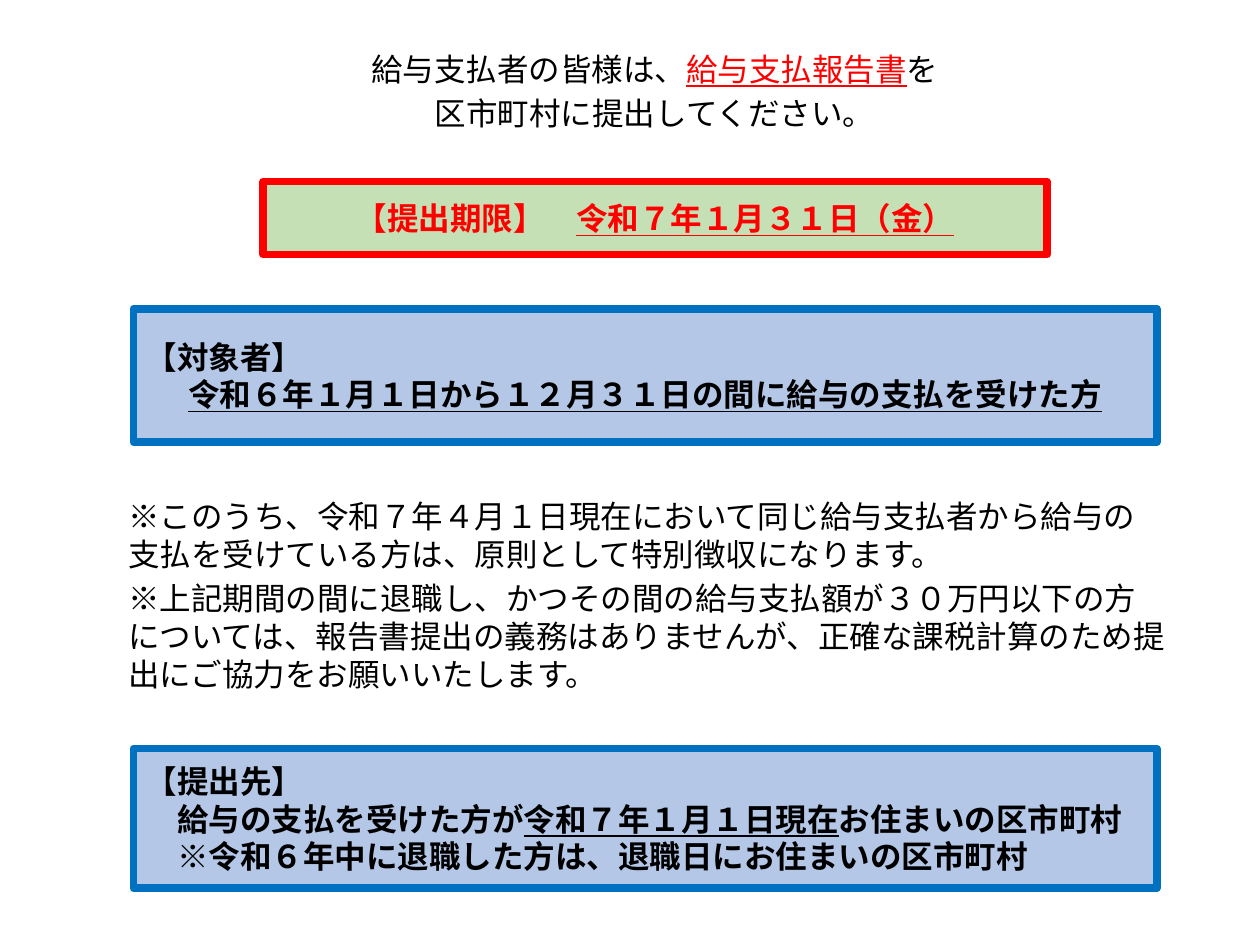
import pptx
import pptx.util
import pptx.dml.color
import pptx.enum.shapes
import pptx.enum.text
import pptx.oxml.ns
import lxml.etree

Inches, Pt = pptx.util.Inches, pptx.util.Pt
RGBColor = pptx.dml.color.RGBColor
PP_ALIGN = pptx.enum.text.PP_ALIGN

BLACK = RGBColor(0x00, 0x00, 0x00)
RED = RGBColor(0xFF, 0x00, 0x00)
GREEN = RGBColor(0xC5, 0xE0, 0xB4)
PALE_BLUE = RGBColor(0xB4, 0xC7, 0xE7)
BLUE = RGBColor(0x00, 0x70, 0xC0)
FONT = "Noto Sans CJK JP"
SIZE = 18
LEFT, CENTER = PP_ALIGN.LEFT, PP_ALIGN.CENTER

TITLE = [
    (CENTER, [("給与支払者の皆様は、", {}),
              ("給与支払報告書", {"color": RED, "underline": True}),
              ("を", {})]),
    (CENTER, [("区市町村に提出してください。", {})]),
]
DEADLINE = [
    (CENTER, [("【提出期限】　", {}),
              ("令和７年１月３１日（金）", {"underline": True})]),
]
TARGET = [
    (LEFT, [("【対象者】", {})]),
    (CENTER, [("令和６年１月１日から１２月３１日の間に給与の支払を受けた方",
               {"underline": True})]),
]
NOTES = [
    (LEFT, [("※このうち、令和７年４月１日現在において同じ給与支払者から給与の"
             "支払を受けている方は、原則として特別徴収になります。", {})]),
    (LEFT, [("※上記期間の間に退職し、かつその間の給与支払額が３０万円以下の方"
             "については、報告書提出の義務はありませんが、正確な課税計算のため提"
             "出にご協力をお願いいたします。", {})]),
]
DESTINATION = [
    (LEFT, [("【提出先】", {})]),
    (LEFT, [("　給与の支払を受けた方が", {}),
            ("令和７年１月１日現在", {"underline": True}),
            ("お住まいの区市町村", {})]),
    (LEFT, [("　※令和６年中に退職した方は、退職日にお住まいの区市町村", {})]),
]
BOXES = [
    ((2.09, 1.44, 6.22, 0.58), DEADLINE, GREEN, RED, RED),
    ((1.06, 2.45, 8.12, 1.06), TARGET, PALE_BLUE, BLUE, BLACK),
    ((1.06, 5.94, 8.12, 1.11), DESTINATION, PALE_BLUE, BLUE, BLACK),
]


def add_run(p, text, color=BLACK, bold=False, underline=False):
    r = p.add_run()
    r.text = text
    f = r.font
    f.name, f.size, f.bold, f.underline = FONT, Pt(SIZE), bold, underline
    f.color.rgb = color
    ea = lxml.etree.Element(pptx.oxml.ns.qn("a:ea"), typeface=FONT)
    r._r.rPr.find(pptx.oxml.ns.qn("a:latin")).addnext(ea)


def write(sp, paragraphs, space_before=0, **style):
    tf = sp.text_frame
    tf.word_wrap = True
    tf.auto_size = pptx.enum.text.MSO_AUTO_SIZE.NONE
    tf.vertical_anchor = pptx.enum.text.MSO_ANCHOR.MIDDLE
    for i, (align, runs) in enumerate(paragraphs):
        p = tf.paragraphs[0] if i == 0 else tf.add_paragraph()
        p.alignment = align
        p.space_before = Pt(space_before)
        for text, extra in runs:
            add_run(p, text, **{**style, **extra})


def main():
    prs = pptx.Presentation()
    prs.slide_width, prs.slide_height = Inches(10), Inches(7.5)
    s = prs.slides.add_slide(prs.slide_layouts[5])

    title = s.shapes.title
    title.left, title.top, title.width, title.height = map(Inches, (1.61, 0, 7.17, 1.44))
    write(title, TITLE, space_before=SIZE * 0.2)

    for place, paragraphs, fill, line, color in BOXES:
        sp = s.shapes.add_shape(pptx.enum.shapes.MSO_SHAPE.RECTANGLE, *map(Inches, place))
        sp.shadow.inherit = False
        sp.fill.solid()
        sp.fill.fore_color.rgb = fill
        sp.line.color.rgb = line
        sp.line.width = Pt(4.5)
        write(sp, paragraphs, color=color, bold=True)

    notes = s.shapes.add_textbox(*map(Inches, (0.92, 3.51, 8.43, 2.42)))
    write(notes, NOTES, space_before=SIZE * 0.2)

    prs.save("out.pptx")


if __name__ == "__main__":
    main()
